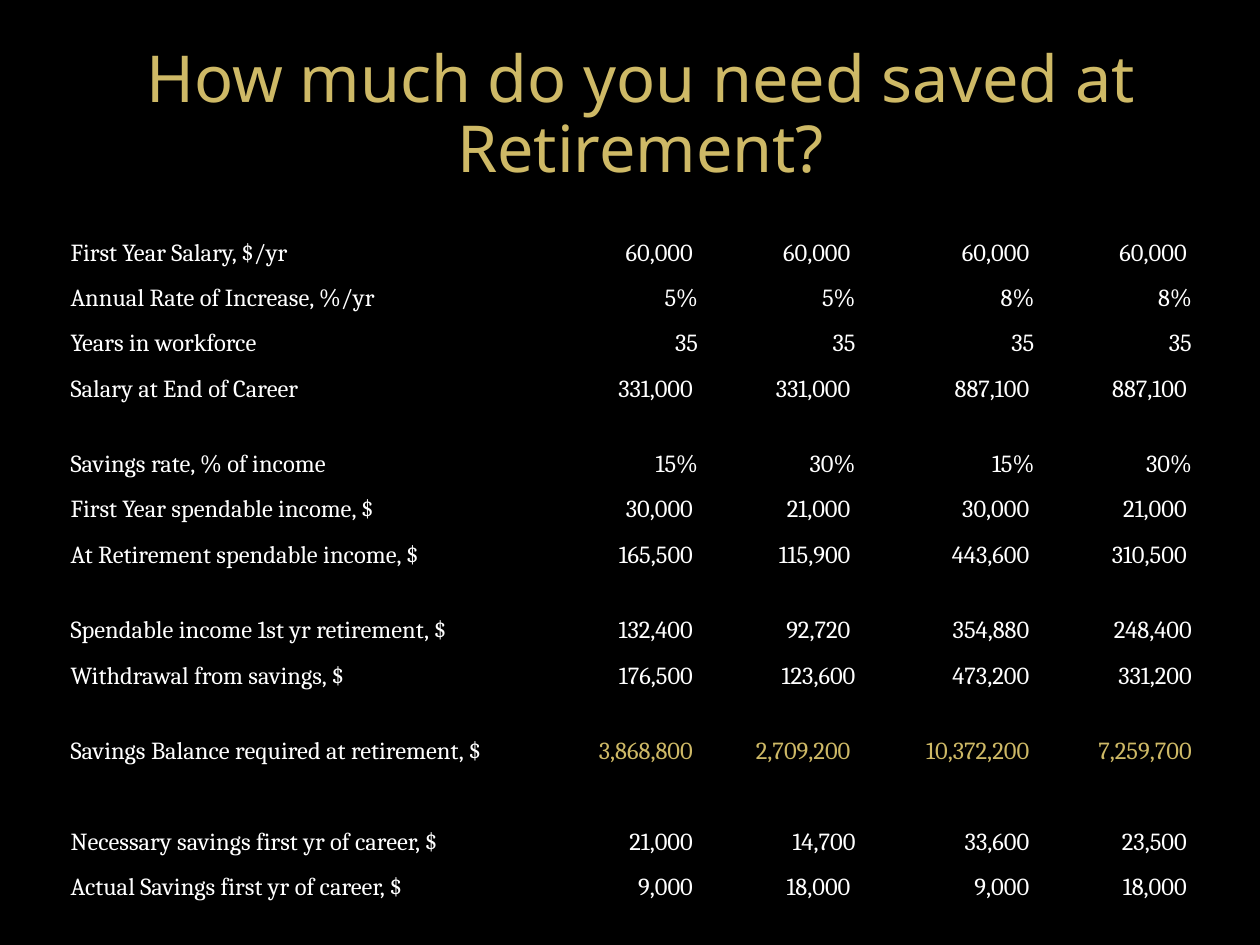
import lxml.etree
import pptx
import pptx.dml.color
import pptx.enum.text
import pptx.oxml.ns
import pptx.util

COLORS = {"background": "000000", "text": "FFFFFF", "accent": "CEB966"}
NO_TABLE_STYLE = "{2D5ABB26-0587-4C30-8999-92F81FD0307C}"

COLUMN_WIDTHS = [35.8, 1.7, 12.5, 12.5, 14.2, 12.5]
FIRST_ROW, LINE_ROW, GAP_ROW = 2.8, 3.6, 2.4
BALANCE = "Savings Balance required at retirement, $"
FLUSH_FIGURES = {"35", "248,400", "123,600", "331,200", "7,259,700", "14,700"}

SCENARIOS = [
    ("First Year Salary, $/yr", "60,000", "60,000", "60,000", "60,000"),
    ("Annual Rate of Increase, %/yr", "5%", "5%", "8%", "8%"),
    ("Years in workforce", "35", "35", "35", "35"),
    ("Salary at End of Career", "331,000", "331,000", "887,100", "887,100"),
    (),
    ("Savings rate, % of income", "15%", "30%", "15%", "30%"),
    ("First Year spendable income, $", "30,000", "21,000", "30,000", "21,000"),
    ("At Retirement spendable income, $", "165,500", "115,900", "443,600", "310,500"),
    (),
    ("Spendable income 1st yr retirement, $", "132,400", "92,720", "354,880", "248,400"),
    ("Withdrawal from savings, $", "176,500", "123,600", "473,200", "331,200"),
    (),
    (BALANCE, "3,868,800", "2,709,200", "10,372,200", "7,259,700"),
    (),
    ("Necessary savings first yr of career, $", "21,000", "14,700", "33,600", "23,500"),
    ("Actual Savings first yr of career, $", "9,000", "18,000", "9,000", "18,000"),
]


class Deck:
    """Slide builder on a grid of 100 columns by 75 rows."""

    def __init__(self):
        self.presentation = pptx.Presentation()
        self.presentation.slide_width = pptx.util.Inches(10)
        self.presentation.slide_height = pptx.util.Inches(7.5)
        self.slide = self.presentation.slides.add_slide(self.presentation.slide_layouts[6])
        self.slide.background.fill.solid()
        self.slide.background.fill.fore_color.rgb = self.color("background")

    def color(self, name):
        return pptx.dml.color.RGBColor.from_string(COLORS[name])

    def across(self, columns):
        return round(self.presentation.slide_width * columns / 100)

    def down(self, rows):
        return round(self.presentation.slide_height * rows / 75)

    def set_text(self, paragraph, text, size, font, color, align):
        paragraph.text = text
        paragraph.alignment = align
        for run in paragraph.runs:
            run.font.size = pptx.util.Pt(size)
            run.font.name = font
            run.font.color.rgb = self.color(color)

    def title(self, text, left, top, width, height):
        heading = self.slide.shapes.add_textbox(
            self.across(left), self.down(top), self.across(width), self.down(height))
        frame = heading.text_frame
        frame.word_wrap = True
        frame.vertical_anchor = pptx.enum.text.MSO_ANCHOR.MIDDLE
        self.set_text(frame.paragraphs[0], text, 37, "Noto Sans", "accent",
                      pptx.enum.text.PP_ALIGN.CENTER)
        frame.paragraphs[0].line_spacing = 0.9

    def cell(self, cell, text, color, align, indent):
        cell.fill.background()
        cell.vertical_anchor = pptx.enum.text.MSO_ANCHOR.BOTTOM
        cell.margin_left = cell.margin_top = pptx.util.Inches(0.01)
        cell.margin_right = pptx.util.Inches(indent)
        cell.margin_bottom = 0
        paragraph = cell.text_frame.paragraphs[0]
        if text:
            self.set_text(paragraph, text, 14, "Cambria", color, align)
        else:
            lxml.etree.SubElement(
                paragraph._p, pptx.oxml.ns.qn("a:endParaRPr"), sz="1000")

    def table(self, records, left, top, widths, heights):
        table = self.slide.shapes.add_table(
            len(records), len(widths), self.across(left), self.down(top),
            self.across(sum(widths)), self.down(sum(heights))).table
        table.first_row = table.horz_banding = False
        table._tbl.tblPr.find(pptx.oxml.ns.qn("a:tableStyleId")).text = NO_TABLE_STYLE
        for column, width in zip(table.columns, widths):
            column.width = self.across(width)
        for row, height, record in zip(table.rows, heights, records):
            row.height = self.down(height)
            label, *figures = record or [""] * (len(widths) - 1)
            figure_color = "accent" if label == BALANCE else "text"
            for index, (cell, text) in enumerate(zip(row.cells, [label, "", *figures])):
                flush = index < 2 or text.endswith("%") or text in FLUSH_FIGURES
                align = pptx.enum.text.PP_ALIGN
                self.cell(cell, text, figure_color if index else "text",
                          align.RIGHT if index else align.LEFT, 0.01 if flush else 0.05)


def main():
    deck = Deck()
    heights = [LINE_ROW if record else GAP_ROW for record in SCENARIOS]
    heights[0] = FIRST_ROW
    heights[13] = LINE_ROW
    deck.table(SCENARIOS, 5.5, 18.4, COLUMN_WIDTHS, heights)
    deck.title("How much do you need saved at Retirement?", 6.7, 2.5, 88.3, 13.5)
    deck.presentation.save("out.pptx")


if __name__ == "__main__":
    main()
